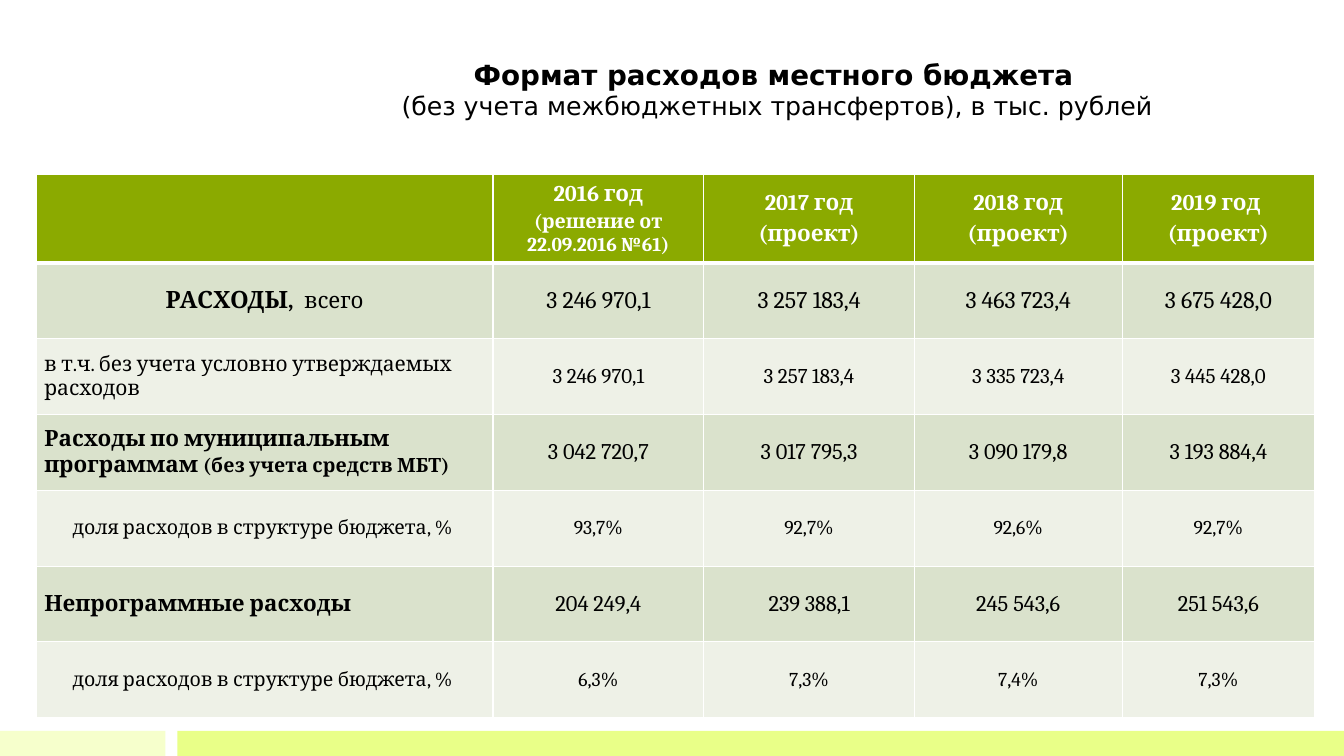
from lxml import etree
from pptx import Presentation, util as u
from pptx.dml import color
from pptx.enum import shapes, text
from pptx.oxml import ns

WIDE, HIGH = 13.33, 7.5
MID, LEFT = text.PP_ALIGN.CENTER, text.PP_ALIGN.LEFT
SHARE = "доля расходов в структуре бюджета, % "
COLS = [4.53, 2.09, 2.09, 2.06, 1.91]
HEADS = [
    [],
    [[("2016 год", 16, True)], [("(решение от 22.09.2016 №61)", 14, True)]],
] + [
    [[(year, 16, True)], [("(проект)", 16, True)]]
    for year in ("2017 год", "2018 год", "2019 год ")
]
ROWS = [
    ([("РАСХОДЫ,  ", 17, True), ("всего", 16, False)], MID, 17,
     ["3 246 970,1", "3 257 183,4", "3 463 723,4", "3 675 428,0"]),
    ([("в т.ч. без учета условно утверждаемых расходов", 15, False)], LEFT, 15,
     ["3 246 970,1", "3 257 183,4", "3 335 723,4", "3 445 428,0"]),
    ([("Расходы по муниципальным программам ", 16, True),
      ("(без учета средств МБТ)", 14, True)], LEFT, 16,
     ["3 042 720,7", "3 017 795,3", "3 090 179,8", "3 193 884,4"]),
    ([(SHARE, 14, False)], MID, 14, ["93,7%", "92,7%", "92,6%", "92,7%"]),
    ([("Непрограммные расходы", 16, True)], LEFT, 16,
     ["204 249,4", "239 388,1", "245 543,6", "251 543,6"]),
    ([(SHARE, 14, False)], MID, 14, ["6,3%", "7,3%", "7,4%", "7,3%"]),
]


def paint(code):
    return color.RGBColor.from_string(code)


def style(run, size, bold, tint="000000", face="Cambria"):
    run.font.size = u.Pt(size)
    run.font.bold = bold
    run.font.name = face
    run.font.color.rgb = paint(tint)


def edge(cell, side, width):
    line = etree.SubElement(cell._tc.get_or_add_tcPr(), ns.qn("a:ln" + side))
    line.set("w", str(u.Pt(width)))
    fill = etree.SubElement(line, ns.qn("a:solidFill"))
    etree.SubElement(fill, ns.qn("a:srgbClr")).set("val", "FFFFFF")


def fill_cell(cell, paras, align, back, tint, tight, top=1, base=1):
    for side, width in zip("LRTB", (1, 1, top, base)):
        edge(cell, side, width)
    cell.fill.solid()
    cell.fill.fore_color.rgb = paint(back)
    cell.vertical_anchor = text.MSO_ANCHOR.MIDDLE
    cell.margin_left = cell.margin_right = u.Inches(0.08)
    if tight:
        cell.margin_top = cell.margin_bottom = 0
    frame = cell.text_frame
    for i, runs in enumerate(paras):
        para = frame.add_paragraph() if i else frame.paragraphs[0]
        para.alignment = align
        if tight:
            para.space_before = u.Pt(0.2 * runs[0][1])
        for words, size, bold in runs:
            run = para.add_run()
            run.text = words
            style(run, size, bold, tint)


def add_title(slide, x, y, w, h):
    title = slide.shapes.title
    title.left, title.top, title.width, title.height = map(u.Inches, (x, y, w, h))
    frame = title.text_frame
    frame.text = ("Формат расходов местного бюджета\v"
                  " (без учета межбюджетных трансфертов), в тыс. рублей")
    frame.word_wrap = True
    frame.auto_size = text.MSO_AUTO_SIZE.NONE
    frame.vertical_anchor = text.MSO_ANCHOR.MIDDLE
    para = frame.paragraphs[0]
    para.alignment = MID
    for run, size, bold in zip(para.runs, (19.8, 18), (True, False)):
        style(run, size, bold, face="DejaVu Sans")


def add_budget(slide, x, y, w, h):
    head = 0.88
    step = (h - head) / len(ROWS)
    table = slide.shapes.add_table(
        len(ROWS) + 1, len(COLS), *map(u.Inches, (x, y, w, h))).table
    for col, width in zip(table.columns, COLS):
        col.width = u.Inches(width * w / sum(COLS))
    for i, row in enumerate(table.rows):
        row.height = u.Inches(step if i else head)
    for j, paras in enumerate(HEADS):
        fill_cell(table.cell(0, j), paras, MID, "8BAA00", "FFFFFF", True, base=3)
    for i, (label, align, size, values) in enumerate(ROWS, 1):
        back = "DAE2CC" if i % 2 else "EEF1E7"
        top = 3 if i == 1 else 1
        fill_cell(table.cell(i, 0), [label], align, back, "000000", True, top)
        for j, value in enumerate(values, 1):
            fill_cell(table.cell(i, j), [[(value, size, False)]], MID, back,
                      "000000", False, top)


def add_foot(slide, x, y, w, h):
    gap, short = 0.12, 1.64
    long = x + short + gap
    for left, width, tint in ((x, short, "F6FFCC"), (long, x + w - long, "E9FF88")):
        bar = slide.shapes.add_shape(
            shapes.MSO_SHAPE.RECTANGLE, *map(u.Inches, (left, y, width, h)))
        bar.shadow.inherit = False
        bar.fill.solid()
        bar.fill.fore_color.rgb = paint(tint)
        bar.line.fill.background()


def main():
    deck = Presentation()
    deck.slide_width, deck.slide_height = u.Inches(WIDE), u.Inches(HIGH)
    slide = deck.slides.add_slide(deck.slide_layouts[5])
    add_foot(slide, 0, HIGH - 0.25, WIDE, 0.25)
    add_title(slide, 2.88, 0.5, 9.58, 0.77)
    add_budget(slide, 0.36, 1.73, 12.68, 5.39)
    deck.save("out.pptx")


if __name__ == "__main__":
    main()
